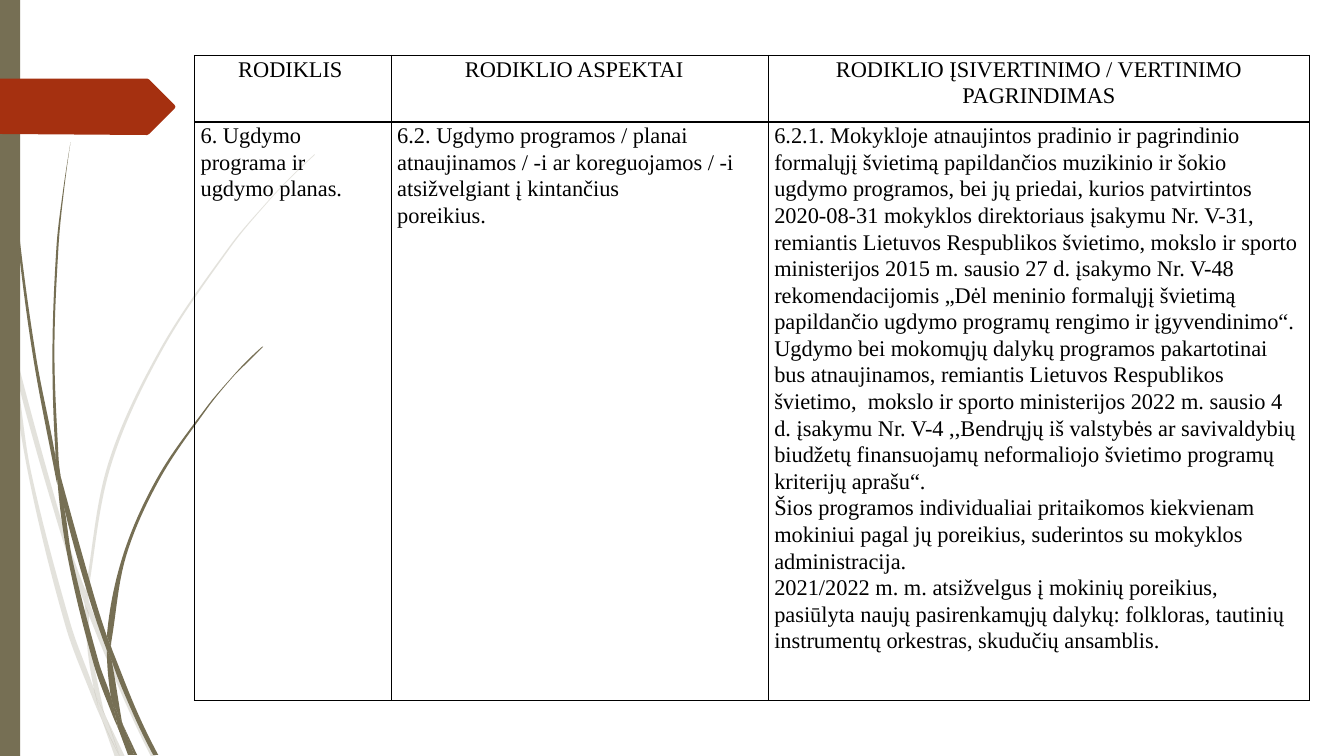
import math

from lxml import etree
from pptx import Presentation
from pptx import util as u
from pptx.dml.color import RGBColor
from pptx.enum import shapes, text
from pptx.oxml import ns

PX = 9144  # EMU in one px: 100 px to the inch
SLIDE = (1333, 750)
COLORS = {"olive": "766F54", "red": "A53010", "black": "000000"}
FONT, FONT_SIZE = "Times New Roman", 16

# Table content
TABLE_AT = (193, 55)
COLUMNS = [195, 374, 537]
ROWS = [66, 574]
MARGIN = 6
HEADER_RIGHT_MARGINS = [11, 17, 6]
CELLS = [
    [["RODIKLIS"], ["RODIKLIO ASPEKTAI"],
     ["RODIKLIO ĮSIVERTINIMO / VERTINIMO PAGRINDIMAS"]],
    [["6. Ugdymo", "programa ir", "ugdymo planas."],
     ["6.2. Ugdymo programos / planai atnaujinamos / -i ar koreguojamos / -i "
      "atsižvelgiant į kintančius",
      "poreikius."],
     ["6.2.1. Mokykloje atnaujintos pradinio ir pagrindinio formalųjį švietimą "
      "papildančios muzikinio ir šokio ugdymo programos, bei jų priedai, kurios "
      "patvirtintos 2020-08-31 mokyklos direktoriaus įsakymu Nr. V-31, remiantis "
      "Lietuvos Respublikos švietimo, mokslo ir sporto ministerijos 2015 m. sausio "
      "27 d. įsakymo Nr. V-48 rekomendacijomis „Dėl meninio formalųjį švietimą "
      "papildančio ugdymo programų rengimo ir įgyvendinimo“.",
      "Ugdymo bei mokomųjų dalykų programos pakartotinai bus atnaujinamos, "
      "remiantis Lietuvos Respublikos švietimo,  mokslo ir sporto ministerijos "
      "2022 m. sausio 4 d. įsakymu Nr. V-4 ,,Bendrųjų iš valstybės ar savivaldybių "
      "biudžetų finansuojamų neformaliojo švietimo programų kriterijų aprašu“.",
      "Šios programos individualiai pritaikomos kiekvienam mokiniui pagal jų "
      "poreikius, suderintos su mokyklos administracija.",
      "2021/2022 m. m. atsižvelgus į mokinių poreikius, pasiūlyta naujų "
      "pasirenkamųjų dalykų: folkloras, tautinių instrumentų orkestras, skudučių "
      "ansamblis."]],
]

# Grass blades: the two sides of each piece, both from its root to its end
PALE_BLADES = [
    ([(0, 282), (9, 322), (11, 350)], [(0, 299), (10, 344), (11, 350)]),
    ([(14, 345), (62, 520), (85, 586)],
     [(14, 345), (17, 376), (58, 522), (84, 599)]),
    ([(88, 596), (92, 607), (127, 692), (155, 751)],
     [(88, 610), (123, 694), (150, 751)]),
    ([(105, 711), (124, 751)], [(105, 711), (119, 751)]),
    ([(11, 350), (17, 376), (31, 469), (70, 619), (93, 683), (99, 707), (101, 714)],
     [(11, 350), (28, 470), (65, 621), (92, 693), (101, 714)]),
    ([(84, 599), (87, 646), (93, 683), (96, 692), (105, 711)],
     [(88, 608), (91, 646), (103, 706), (105, 711)]),
    ([(85, 586), (85, 584), (107, 461), (158, 348), (228, 244), (268, 197),
      (289, 175), (312, 153)],
     [(88, 596), (88, 584), (110, 462), (160, 349), (229, 245), (268, 198),
      (290, 175), (312, 154)]),
    ([(101, 714), (114, 751)], [(101, 714), (119, 751)]),
    ([(85, 586), (84, 599)], [(88, 596), (88, 610)]),
    ([(93, 683), (99, 707), (101, 714), (119, 751)],
     [(93, 683), (96, 692), (105, 711), (119, 751)]),
]
DARK_BLADES = [
    ([(3, 0), (3, 48), (7, 110), (17, 233), (33, 355), (56, 477), (57, 481)],
     [(3, 0), (5, 48), (8, 109), (19, 232), (36, 355), (55, 453), (57, 481)]),
    ([(60, 472), (64, 505), (88, 592), (106, 645)],
     [(60, 472), (93, 590), (106, 631)]),
    ([(110, 641), (113, 649), (136, 706), (157, 749)],
     [(110, 641), (111, 656), (132, 708), (152, 749)]),
    ([(57, 477), (64, 505), (72, 556), (98, 657), (110, 691), (116, 717), (117, 722)],
     [(57, 477), (68, 557), (93, 659), (111, 708), (117, 722)]),
    ([(70, 141), (62, 193), (56, 245), (52, 349), (55, 449), (60, 472)],
     [(70, 141), (63, 193), (58, 245), (54, 349), (58, 453), (60, 472)]),
    ([(122, 719), (136, 749)], [(122, 719), (133, 749)]),
    ([(55, 449), (55, 453), (57, 477), (64, 505)],
     [(55, 449), (60, 472), (64, 505)]),
    ([(106, 631), (122, 551), (156, 474), (204, 405), (231, 373), (245, 358), (260, 344)],
     [(110, 641), (111, 633), (125, 552), (158, 476), (205, 406), (231, 374),
      (246, 359), (261, 344)]),
    ([(117, 722), (127, 749)], [(117, 722), (131, 749)]),
    ([(106, 645), (110, 691), (116, 706), (122, 719)],
     [(106, 645), (109, 651), (111, 656), (121, 716), (122, 719)]),
    ([(106, 631), (106, 645)], [(110, 641), (111, 656)]),
    ([(110, 691), (116, 717), (117, 722), (130, 749)],
     [(110, 691), (116, 706), (122, 719), (133, 749)]),
]
BAR = (0, 0, 20, 750)
TAG = [(-1, 133), (0, 78), (146, 78), (148, 79), (173, 104), (174, 106),
       (173, 108), (148, 133), (146, 134)]


def color(name):
    return RGBColor.from_string(COLORS[name])


def paint(shape, name, opacity=100):
    shape.shadow.inherit = False
    shape.fill.solid()
    shape.fill.fore_color.rgb = color(name)
    shape.line.fill.background()
    if opacity < 100:
        tint = shape.fill._xPr.find(".//" + ns.qn("a:srgbClr"))
        etree.SubElement(tint, ns.qn("a:alpha"), val=str(opacity * 1000))


def handles(side):
    """Give the two control points of each smooth segment along a side."""
    angles = [math.atan2(d[1] - c[1], d[0] - c[0]) for c, d in zip(side, side[1:])]
    inner = [math.atan2(d[1] - b[1], d[0] - b[0]) for b, d in zip(side, side[2:])]
    if inner:
        slopes = [2 * angles[0] - inner[0], *inner, 2 * angles[-1] - inner[-1]]
    else:
        slopes = angles * 2
    pairs = []
    for start, end, a, b in zip(side, side[1:], slopes, slopes[1:]):
        reach = math.dist(start, end) / 3
        pairs.append(((start[0] + reach * math.cos(a), start[1] + reach * math.sin(a)),
                      (end[0] - reach * math.cos(b), end[1] - reach * math.sin(b))))
    return pairs


def add_outline(parent, points):
    corners = [(x * PX, y * PX) for x, y in points]
    builder = parent.shapes.build_freeform(*corners[0], scale=1.0)
    builder.add_line_segments(corners[1:], close=True)
    return builder.convert_to_shape()


def add_blade(group, left, right):
    back = right[::-1]
    joined = left[-1] == back[0]
    points = left + back[joined:]
    blade = add_outline(group, points)
    curves = handles(left) + ([] if joined else [None]) + handles(back)
    x0, y0 = (min(values) for values in zip(*points))
    lines = list(blade._element.iter(ns.qn("a:lnTo")))
    for line, pair in zip(lines, curves):
        if pair:
            line.tag = ns.qn("a:cubicBezTo")
            for place, (x, y) in enumerate(pair):
                spot = etree.Element(ns.qn("a:pt"), x=str(round((x - x0) * PX)),
                                     y=str(round((y - y0) * PX)))
                line.insert(place, spot)
    return blade


def add_blades(page, blades, opacity):
    group = page.shapes.add_group_shape()
    for left, right in blades:
        paint(add_blade(group, left, right), "olive", opacity)


def add_borders(cell):
    props = cell._tc.get_or_add_tcPr()
    for place, side in enumerate(("lnL", "lnR", "lnT", "lnB")):
        line = etree.Element(ns.qn("a:" + side), w=str(u.Pt(1)))
        fill = etree.SubElement(line, ns.qn("a:solidFill"))
        etree.SubElement(fill, ns.qn("a:srgbClr"), val=COLORS["black"])
        props.insert(place, line)


def fill_cell(cell, lines, align, right_margin):
    cell.margin_left, cell.margin_right = MARGIN * PX, right_margin * PX
    cell.margin_top = cell.margin_bottom = 0
    cell.fill.background()
    add_borders(cell)
    for index, line in enumerate(lines):
        frame = cell.text_frame
        para = frame.add_paragraph() if index else frame.paragraphs[0]
        para.alignment, para.line_spacing = align, 1.07
        span = para.add_run()
        span.text = line
        span.font.name, span.font.size = FONT, u.Pt(FONT_SIZE)
        span.font.color.rgb = color("black")


def add_criteria_table(page):
    box = (*TABLE_AT, sum(COLUMNS), sum(ROWS))
    table = page.shapes.add_table(len(ROWS), len(COLUMNS), *(n * PX for n in box)).table
    table.first_row = table.horz_banding = False
    for c, width in enumerate(COLUMNS):
        table.columns[c].width = width * PX
        for r, height in enumerate(ROWS):
            table.rows[r].height = height * PX
            align = text.PP_ALIGN.LEFT if r else text.PP_ALIGN.CENTER
            margin = MARGIN if r else HEADER_RIGHT_MARGINS[c]
            fill_cell(table.cell(r, c), CELLS[r][c], align, margin)


deck = Presentation()
deck.slide_width, deck.slide_height = (n * PX for n in SLIDE)
page = deck.slides.add_slide(deck.slide_layouts[6])
# Side decoration
add_blades(page, PALE_BLADES, 20)
add_blades(page, DARK_BLADES, 100)
bar = page.shapes.add_shape(shapes.MSO_SHAPE.RECTANGLE, *(n * PX for n in BAR))
paint(bar, "olive")
paint(add_outline(page, TAG), "red")
# Criteria
add_criteria_table(page)
deck.save("out.pptx")
